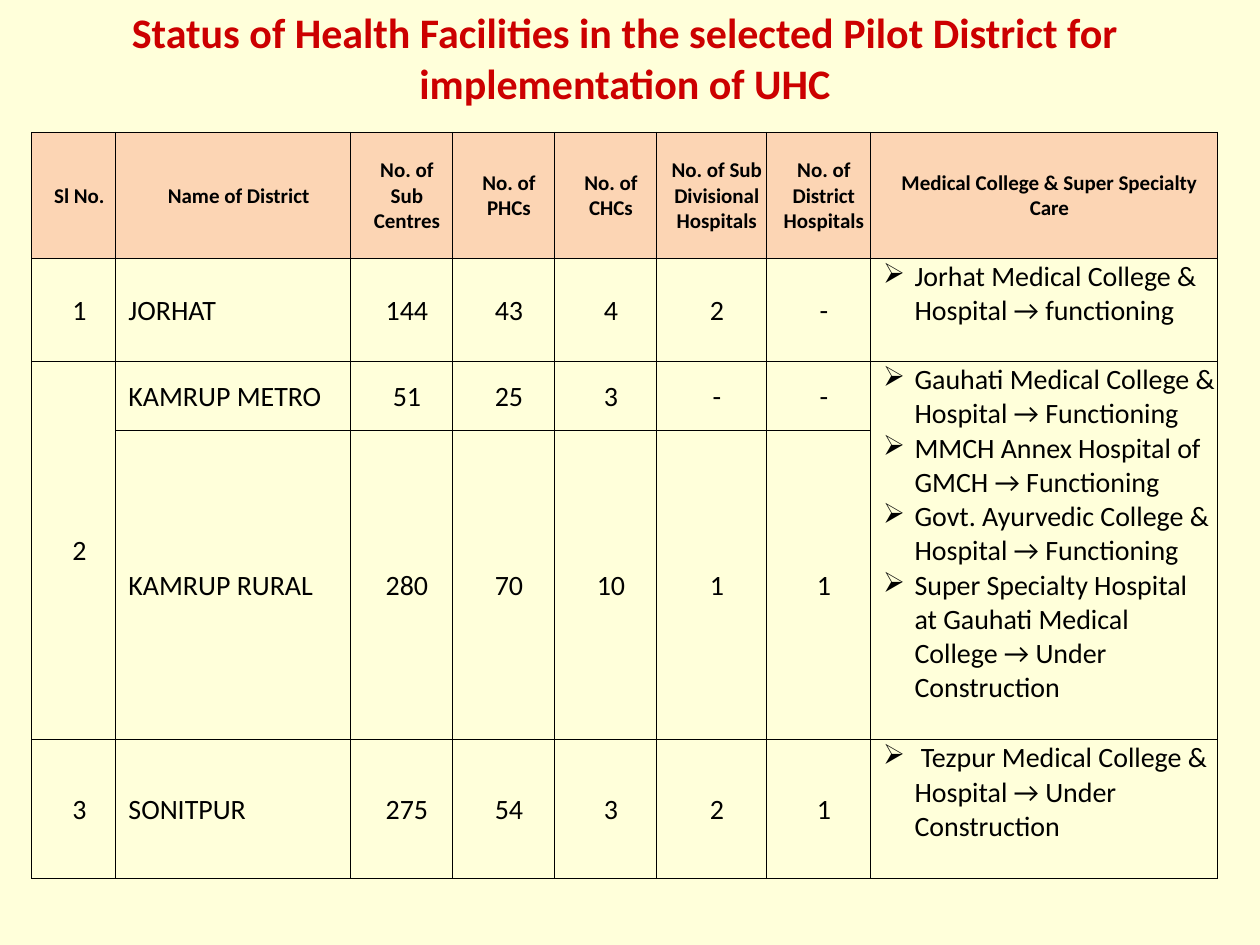
from lxml import etree
from pptx import Presentation
from pptx import util as u
from pptx.dml.color import RGBColor
from pptx.enum import text
from pptx.oxml.ns import qn

COLORS = {"page": "FFFFDA", "title": "CC0000", "ink": "000000", "header": "FCD5B4"}
FONT = "Calibri"
WIDTHS = [0.67, 1.86, 0.81, 0.81, 0.81, 0.87, 0.83, 2.75]
HEIGHTS = [1, 0.82, 0.55, 2.45, 1.1]
NAME_COLUMN, CARE_COLUMN = 1, 7

# Each cell holds a list of paragraphs; None is covered by the merged cell above
HEADINGS = ["Sl No.", "Name of District", "No. of Sub Centres", "No. of PHCs", "No. of CHCs",
            "No. of Sub Divisional Hospitals", "No. of District Hospitals",
            "Medical College & Super Specialty Care"]
DISTRICTS = [
    ["1", "JORHAT", "144", "43", "4", "2", "-",
     ["Jorhat Medical College & Hospital → functioning"]],
    ["2", "KAMRUP METRO", "51", "25", "3", "-", "-",
     ["Gauhati Medical College & Hospital → Functioning",
      "MMCH Annex Hospital of GMCH → Functioning",
      "Govt. Ayurvedic College & Hospital → Functioning",
      "Super Specialty Hospital at Gauhati Medical College → Under Construction"]],
    [None, "KAMRUP RURAL", "280", "70", "10", "1", "1", None],
    ["3", "SONITPUR", "275", "54", "3", "2", "1",
     [" Tezpur Medical College & Hospital → Under Construction"]],
]


def style_font(para, size, bold, color):
    para.font.name = FONT
    para.font.size = u.Pt(size)
    para.font.bold = bold
    para.font.color.rgb = RGBColor.from_string(COLORS[color])


def add_borders(cell):
    properties = cell._tc.get_or_add_tcPr()
    for side in ("a:lnL", "a:lnR", "a:lnT", "a:lnB"):
        line = etree.SubElement(properties, qn(side), w=str(u.Pt(0.5)))
        fill = etree.SubElement(line, qn("a:solidFill"))
        etree.SubElement(fill, qn("a:srgbClr"), val=COLORS["ink"])


deck = Presentation()
deck.slide_width, deck.slide_height = u.Inches(10), u.Inches(7.5)
page = deck.slides.add_slide(deck.slide_layouts[6])
page.background.fill.solid()
page.background.fill.fore_color.rgb = RGBColor.from_string(COLORS["page"])

# Title
title = page.shapes.add_textbox(u.Inches(0.25), u.Inches(0.08), u.Inches(9.42), u.Inches(0.75))
title.text_frame.word_wrap = True
title.text_frame.vertical_anchor = text.MSO_ANCHOR.MIDDLE
para = title.text_frame.paragraphs[0]
para.text = "Status of Health Facilities in the selected Pilot District for implementation of UHC"
para.alignment = text.PP_ALIGN.CENTER
style_font(para, 24, True, "title")

# Table grid
table = page.shapes.add_table(len(HEIGHTS), len(WIDTHS), u.Inches(0.25), u.Inches(1.05),
                              u.Inches(sum(WIDTHS)), u.Inches(sum(HEIGHTS))).table
table.first_row = table.horz_banding = False
for column, width in zip(table.columns, WIDTHS):
    column.width = u.Inches(width)
for row, height in zip(table.rows, HEIGHTS):
    row.height = u.Inches(height)
for merged in (0, CARE_COLUMN):
    table.cell(2, merged).merge(table.cell(3, merged))

# Table cells
for r, values in enumerate([HEADINGS] + DISTRICTS):
    for c, value in enumerate(values):
        cell = table.cell(r, c)
        is_header = r == 0
        is_list = isinstance(value, list)
        add_borders(cell)
        if is_header:
            cell.fill.solid()
            cell.fill.fore_color.rgb = RGBColor.from_string(COLORS["header"])
        else:
            cell.fill.background()
        cell.vertical_anchor = text.MSO_ANCHOR.MIDDLE
        cell.margin_left = u.Inches(0.1)
        cell.margin_right = cell.margin_top = u.Inches(0.01)
        # Lists keep one free line below them
        cell.margin_bottom = u.Inches(0.27 if is_list else 0)
        if value is None:
            continue
        cell.text = "\n".join(value) if is_list else value
        for para in cell.text_frame.paragraphs:
            if is_list:
                properties = para._p.get_or_add_pPr()
                properties.set("marL", str(u.Inches(0.25)))
                properties.set("indent", str(u.Inches(-0.25)))
                etree.SubElement(properties, qn("a:buFont"), typeface="Wingdings")
                etree.SubElement(properties, qn("a:buChar"), char="Ø")
            elif is_header or c != NAME_COLUMN:
                para.alignment = text.PP_ALIGN.CENTER
            style_font(para, 12 if is_header else 16, is_header, "ink")

deck.save("out.pptx")
